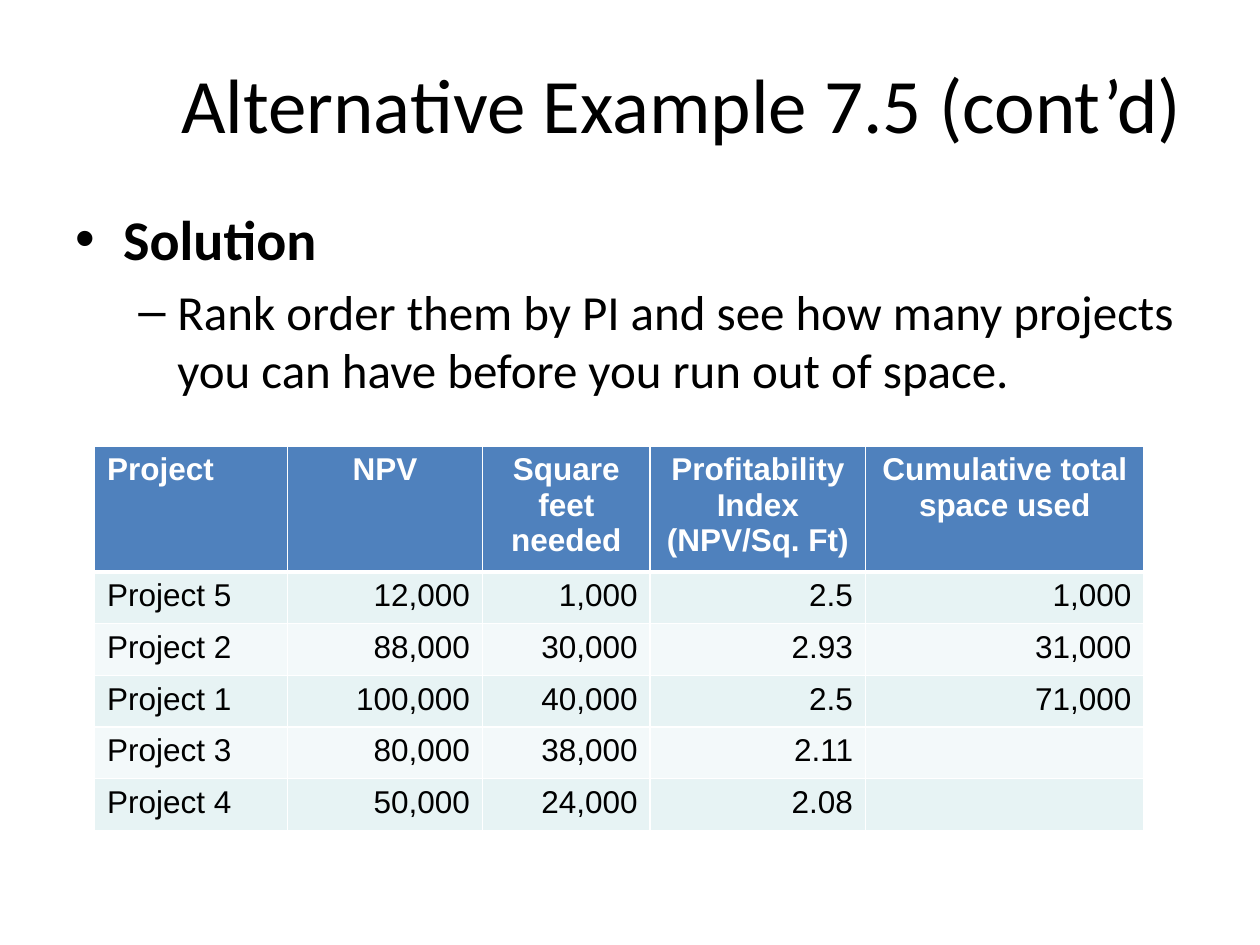
from dataclasses import dataclass

from lxml.etree import SubElement as sub
from pptx import Presentation
from pptx.dml.color import RGBColor as RGB
from pptx.enum.text import MSO_ANCHOR as Anchor, PP_ALIGN as Align
from pptx.oxml.ns import qn
from pptx.util import Inches, Pt


@dataclass(frozen=True)
class Theme:
    """Colours, fonts and type sizes of the slide."""
    ink: RGB = RGB.from_string("000000")
    white: RGB = RGB.from_string("FFFFFF")
    head: RGB = RGB.from_string("4F81BD")
    bands: tuple = (RGB.from_string("E7F3F4"), RGB.from_string("F3F9FA"))
    text: str = "Calibri"
    grid: str = "Arial"
    title: int = 44
    lead: int = 32
    point: int = 28
    cell: int = 18


THEME = Theme()

POINTS = [
    ("Solution", "•", THEME.lead, True, 0.38, 0.38, 0),
    ("Rank order them by PI and see how many projects you can have "
     "before you run out of space.", "–", THEME.point, False, 0.81, 0.31, 5.6),
]

WIDTHS = [1.53, 1.55, 1.33, 1.71, 2.21]
HEAD_H, ROW_H = 0.93, 0.41
ROWS = [
    ["Project", "NPV", "Square feet needed", "Profitability Index (NPV/Sq. Ft)",
     "Cumulative total space used"],
    ["Project 5", "12,000", "1,000", "2.5", "1,000"],
    ["Project 2", "88,000", "30,000", "2.93", "31,000"],
    ["Project 1", "100,000", "40,000", "2.5", "71,000"],
    ["Project 3", "80,000", "38,000", "2.11", ""],
    ["Project 4", "50,000", "24,000", "2.08", ""],
]


def style(para, face, size, color, bold=False):
    """Format every run of a paragraph."""
    for run in para.runs:
        font = run.font
        font.name, font.size, font.bold = face, Pt(size), bold
        font.color.rgb = color


def add_frame(slide, box):
    """Add a wrapping text box and return its text frame."""
    frame = slide.shapes.add_textbox(*map(Inches, box)).text_frame
    frame.word_wrap = True
    return frame


def add_title(slide, box):
    """Place the centred slide title."""
    frame = add_frame(slide, box)
    frame.vertical_anchor = Anchor.MIDDLE
    frame.text = "Alternative Example 7.5 (cont’d) "
    para = frame.paragraphs[0]
    para.alignment = Align.CENTER
    style(para, THEME.text, THEME.title, THEME.ink)


def add_points(slide, box):
    """Place the bulleted text."""
    frame = add_frame(slide, box)
    frame.text = "\n".join(point[0] for point in POINTS)
    for para, point in zip(frame.paragraphs, POINTS):
        _, mark, size, bold, left, hang, gap = point
        if gap:
            para.space_before = Pt(gap)
        props = para._p.get_or_add_pPr()
        props.set("marL", str(Inches(left)))
        props.set("indent", str(-Inches(hang)))
        sub(props, qn("a:buFont")).set("typeface", THEME.grid)
        sub(props, qn("a:buChar")).set("char", mark)
        style(para, THEME.text, size, THEME.ink, bold)


def add_edges(cell, top, bottom):
    """Draw white cell borders of the given top and bottom widths."""
    props = cell._tc.get_or_add_tcPr()
    for side, width in (("L", 1), ("R", 1), ("T", top), ("B", bottom)):
        line = sub(props, qn(f"a:ln{side}"), w=str(Pt(width)))
        fill = sub(line, qn("a:solidFill"))
        sub(fill, qn("a:srgbClr"), val=str(THEME.white))


def fill_cell(cell, text, row, col):
    """Set the text, borders and fill of one table cell."""
    head = row == 0
    add_edges(cell, 3 if row == 1 else 1, 3 if head else 1)
    cell.fill.solid()
    cell.fill.fore_color.rgb = THEME.head if head else THEME.bands[(row - 1) % 2]
    cell.text_frame.text = text
    para = cell.text_frame.paragraphs[0]
    if col:
        para.alignment = Align.CENTER if head else Align.RIGHT
    style(para, THEME.grid, THEME.cell, THEME.white if head else THEME.ink, head)


def add_ranks(slide, left, top):
    """Place the table of ranked projects."""
    high = HEAD_H + ROW_H * (len(ROWS) - 1)
    box = map(Inches, (left, top, sum(WIDTHS), high))
    table = slide.shapes.add_table(len(ROWS), len(WIDTHS), *box).table
    for column, width in zip(table.columns, WIDTHS):
        column.width = Inches(width)
    for row, texts in enumerate(ROWS):
        table.rows[row].height = Inches(ROW_H if row else HEAD_H)
        for col, text in enumerate(texts):
            fill_cell(table.cell(row, col), text, row, col)


def main():
    """Build and save the slide."""
    deck = Presentation()
    deck.slide_width, deck.slide_height = Inches(10), Inches(7.5)
    slide = deck.slides.add_slide(deck.slide_layouts[6])
    add_title(slide, (1.27, 0.19, 8.42, 1.25))
    add_points(slide, (0.5, 1.57, 9.17, 5.08))
    add_ranks(slide, 0.75, 3.54)
    deck.save("out.pptx")


if __name__ == "__main__":
    main()
